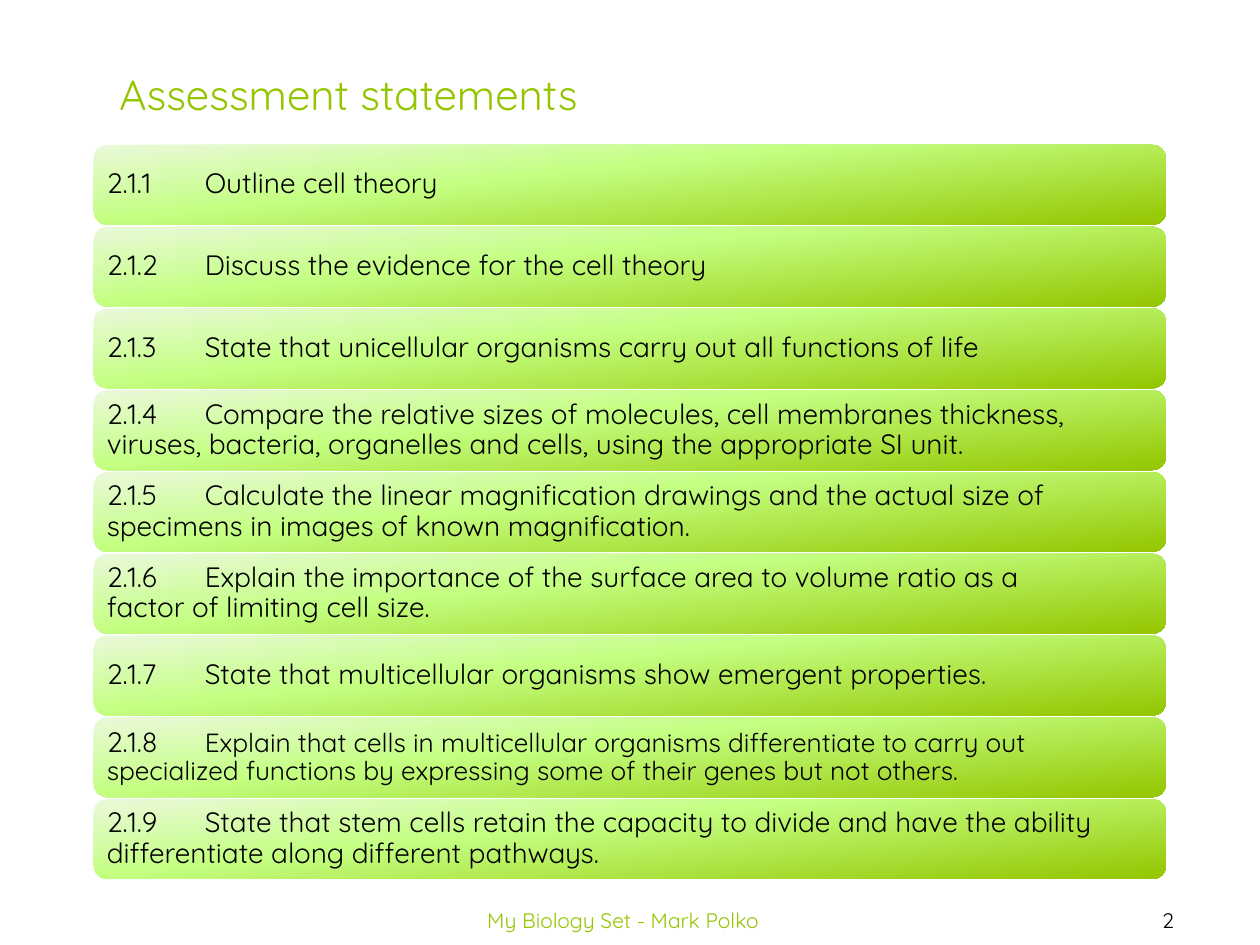
from lxml.etree import SubElement
from pptx import Presentation
from pptx.dml.color import RGBColor
from pptx.enum.shapes import MSO_SHAPE
from pptx.enum.text import MSO_ANCHOR, MSO_AUTO_SIZE, PP_ALIGN
from pptx.oxml.ns import qn
from pptx.util import Emu, Inches, Pt

PX = Inches(1) / 126
FONT = "Quicksand"
COLORS = {"text": "000000", "accent": "94C600", "pale": "EAF9DA", "light": "C4FF82"}
BAR_STOPS = [(0, "pale"), (40, "light"), (100, "accent")]
BAR_ANGLE = 84
BAR_GAP = 2
BAR_INSET = 9
TAB_WIDTH = 98

# Number, statement and text size of the statement
STATEMENTS = [
    ("2.1.1", "Outline cell theory", 16),
    ("2.1.2", "Discuss the evidence for the cell theory", 16),
    ("2.1.3", "State that unicellular organisms carry out all functions of life", 16),
    ("2.1.4", "Compare the relative sizes of molecules, cell membranes thickness, "
              "\tviruses, bacteria, organelles and cells, using the appropriate SI unit.", 16),
    ("2.1.5", "Calculate the linear magnification drawings and the actual size of "
              "\tspecimens in images of known magnification.", 16),
    ("2.1.6", "Explain the importance of the surface area to volume ratio as a "
              "\tfactor of limiting cell size.", 16),
    ("2.1.7", "State that multicellular organisms show emergent properties.", 16),
    ("2.1.8", "Explain that cells in multicellular organisms differentiate to carry out "
              "\tspecialized functions by expressing some of their genes but not others.", 15),
    ("2.1.9", "State that stem cells retain the capacity to divide and have the ability "
              "\tdifferentiate along different pathways.", 16),
]


def px(length):
    return Emu(round(length * PX))


def style(font, size, color):
    font.name = FONT
    font.size = Pt(size)
    font.color.rgb = RGBColor.from_string(COLORS[color])


def fill_gradient(shape):
    """Replace the stops of a linear gradient, as python-pptx cannot add any."""
    shape.fill.gradient()
    gradient = shape._element.spPr.find(qn("a:gradFill"))
    stops = gradient.find(qn("a:gsLst"))
    for stop in list(stops):
        stops.remove(stop)
    for position, color in BAR_STOPS:
        stop = SubElement(stops, qn("a:gs"), pos=str(position * 1000))
        SubElement(stop, qn("a:srgbClr"), val=COLORS[color])
    direction = gradient.find(qn("a:lin"))
    direction.set("ang", str(BAR_ANGLE * 60000))
    direction.set("scaled", "0")


def add_title(slide, box, title):
    frame = slide.shapes.add_textbox(*map(px, box)).text_frame
    frame.word_wrap = False
    frame.auto_size = MSO_AUTO_SIZE.SHAPE_TO_FIT_TEXT
    frame.text = title
    style(frame.paragraphs[0].font, 24, "accent")


def add_statement(slide, box, number, statement, size):
    bar = slide.shapes.add_shape(MSO_SHAPE.ROUNDED_RECTANGLE, *map(px, box))
    bar.shadow.inherit = False
    bar.line.fill.background()
    fill_gradient(bar)

    frame = bar.text_frame
    frame.word_wrap = True
    frame.vertical_anchor = MSO_ANCHOR.MIDDLE
    frame.margin_left = frame.margin_right = px(BAR_INSET)
    frame.margin_top = frame.margin_bottom = px(BAR_INSET)
    paragraph = frame.paragraphs[0]
    paragraph.alignment = PP_ALIGN.LEFT
    paragraph.line_spacing = 0.9
    paragraph._p.get_or_add_pPr().set("defTabSz", str(px(TAB_WIDTH)))
    for text, text_size in ((f"{number} \t", 16), (statement, size)):
        run = paragraph.add_run()
        run.text = text
        style(run.font, text_size, "text")


def add_statements(slide, box):
    left, top, width, height = box
    pitch = (height + BAR_GAP) / len(STATEMENTS)
    for row, statement in enumerate(STATEMENTS):
        bar_box = (left, top + row * pitch, width, pitch - BAR_GAP)
        add_statement(slide, bar_box, *statement)


def add_footer(slide, box, text, color):
    frame = slide.shapes.add_textbox(*map(px, box)).text_frame
    frame.word_wrap = True
    frame.vertical_anchor = MSO_ANCHOR.MIDDLE
    frame.text = text
    paragraph = frame.paragraphs[0]
    paragraph.alignment = PP_ALIGN.CENTER
    style(paragraph.font, 12, color)


def main():
    presentation = Presentation()
    presentation.slide_width = Inches(10)
    presentation.slide_height = Inches(7.5)
    slide = presentation.slides.add_slide(presentation.slide_layouts[6])
    add_footer(slide, (1076, 895, 184, 50), "2", "text")
    add_footer(slide, (382, 895, 482, 50), "My Biology Set - Mark Polko", "accent")
    add_statements(slide, (94, 145, 1072, 734))
    add_title(slide, (107, 62, 496, 63), "Assessment statements")
    presentation.save("out.pptx")


if __name__ == "__main__":
    main()
